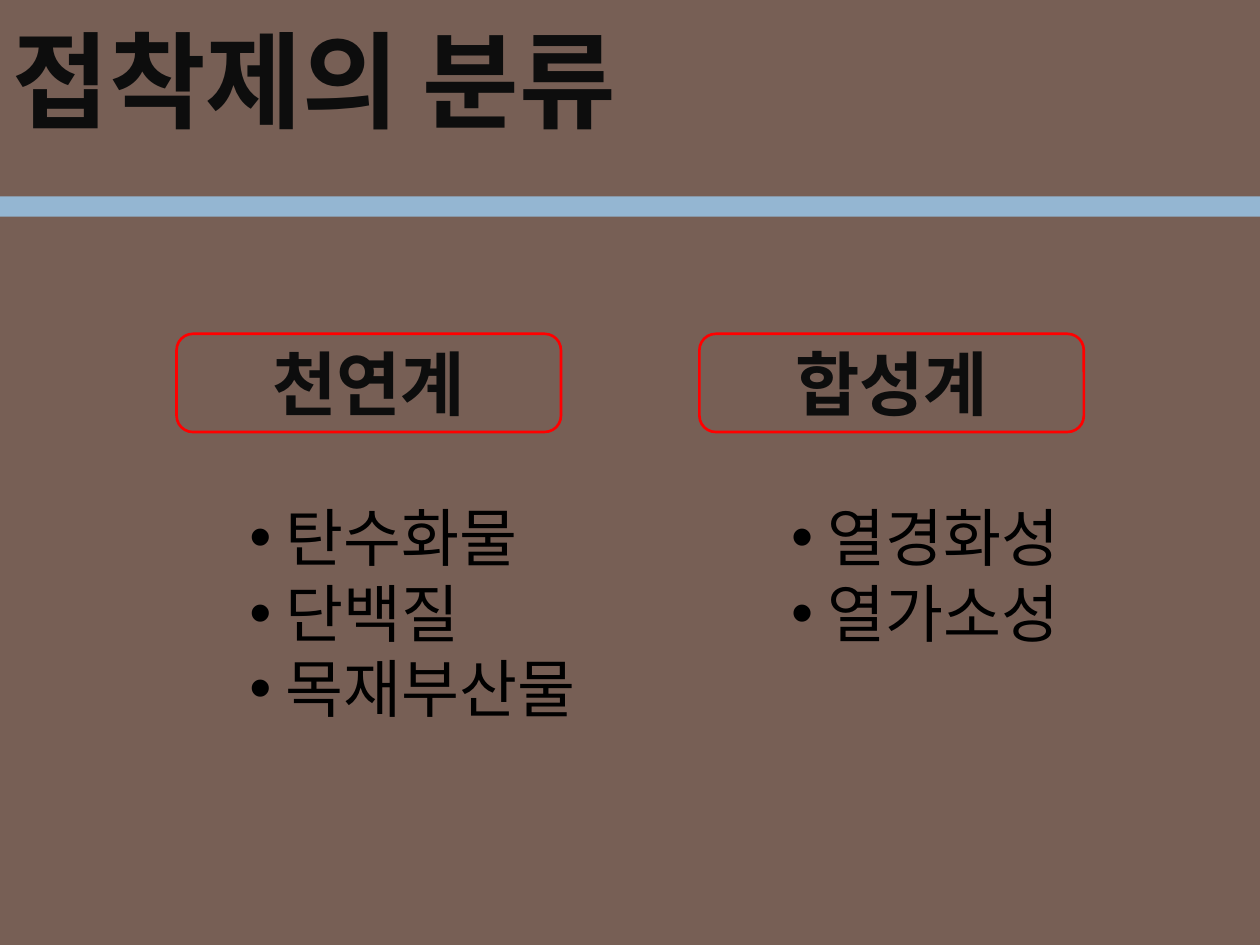
"""Build the slide that sorts adhesives into natural and synthetic groups."""
from dataclasses import dataclass

from lxml import etree
from pptx import Presentation
from pptx.dml.color import RGBColor
from pptx.enum import shapes, text
from pptx.oxml import ns
from pptx.util import Cm, Pt

INK, BLACK, RED, BLUE, BROWN = "0D0D0D", "000000", "FF0000", "94B6D2", "775F55"
HEADING_TOP, LIST_TOP = 6.73, 9.93


@dataclass
class Group:
    heading: str
    items: list[str]
    heading_left: float
    list_left: float
    first_font: str = "Calibri"


GROUPS = [
    Group("천연계", [" 탄수화물", " 단백질", " 목재부산물"], 3.56, 4.78, "Arial"),
    Group("합성계", [" 열경화성", " 열가소성"], 14.1, 15.7),
]


def color(value: str) -> RGBColor:
    return RGBColor.from_string(value)


def style(para, size: int, font: str, ink: str, bold: bool = False) -> None:
    for span in para.runs:
        span.font.size = Pt(size)
        span.font.name = font
        span.font.bold = bold
        span.font.color.rgb = color(ink)


def add_title(page, wording: str) -> None:
    box = page.shapes.title
    box.left, box.top, box.width, box.height = Cm(0), Cm(0), Cm(17.04), Cm(3.18)
    frame = box.text_frame
    frame.text = wording
    frame.auto_size = text.MSO_AUTO_SIZE.NONE
    frame.vertical_anchor = text.MSO_ANCHOR.MIDDLE
    para = frame.paragraphs[0]
    para.alignment = text.PP_ALIGN.LEFT
    style(para, 60, "Arial", INK, True)


def add_heading(page, group: Group) -> None:
    box = page.shapes.add_shape(shapes.MSO_SHAPE.ROUNDED_RECTANGLE, Cm(group.heading_left),
                                Cm(HEADING_TOP), Cm(7.75), Cm(1.98))
    box.shadow.inherit = False
    box.fill.background()
    box.line.color.rgb = color(RED)
    box.line.width = Pt(1.5)
    frame = box.text_frame
    frame.text = group.heading
    frame.vertical_anchor = text.MSO_ANCHOR.MIDDLE
    para = frame.paragraphs[0]
    para.alignment = text.PP_ALIGN.CENTER
    style(para, 40, "Calibri", INK, True)


def add_bullet(para) -> None:
    properties = para._p.get_or_add_pPr()
    etree.SubElement(properties, ns.qn("a:buFont"), typeface="Arial")
    etree.SubElement(properties, ns.qn("a:buChar"), char="•")


def add_list(page, group: Group) -> None:
    box = page.shapes.add_textbox(Cm(group.list_left), Cm(LIST_TOP), Cm(8.13), Cm(4.88))
    frame = box.text_frame
    frame.word_wrap = True
    frame.auto_size = text.MSO_AUTO_SIZE.SHAPE_TO_FIT_TEXT
    frame.text = "\n".join(group.items)
    for index, para in enumerate(frame.paragraphs):
        add_bullet(para)
        style(para, 36, "Calibri" if index else group.first_font, BLACK)


def add_band(page, width: int) -> None:
    band = page.shapes.add_shape(shapes.MSO_SHAPE.RECTANGLE, Cm(0), Cm(3.96), width, Cm(0.41))
    band.shadow.inherit = False
    band.fill.solid()
    band.fill.fore_color.rgb = color(BLUE)
    band.line.fill.background()


def main() -> None:
    deck = Presentation()
    deck.slide_width, deck.slide_height = Cm(25.4), Cm(19.05)
    page = deck.slides.add_slide(deck.slide_layouts.get_by_name("Title Only"))
    page.background.fill.solid()
    page.background.fill.fore_color.rgb = color(BROWN)
    add_title(page, "접착제의 분류")
    for group in GROUPS:
        add_heading(page, group)
    for group in GROUPS:
        add_list(page, group)
    add_band(page, deck.slide_width)
    deck.save("out.pptx")


if __name__ == "__main__":
    main()
